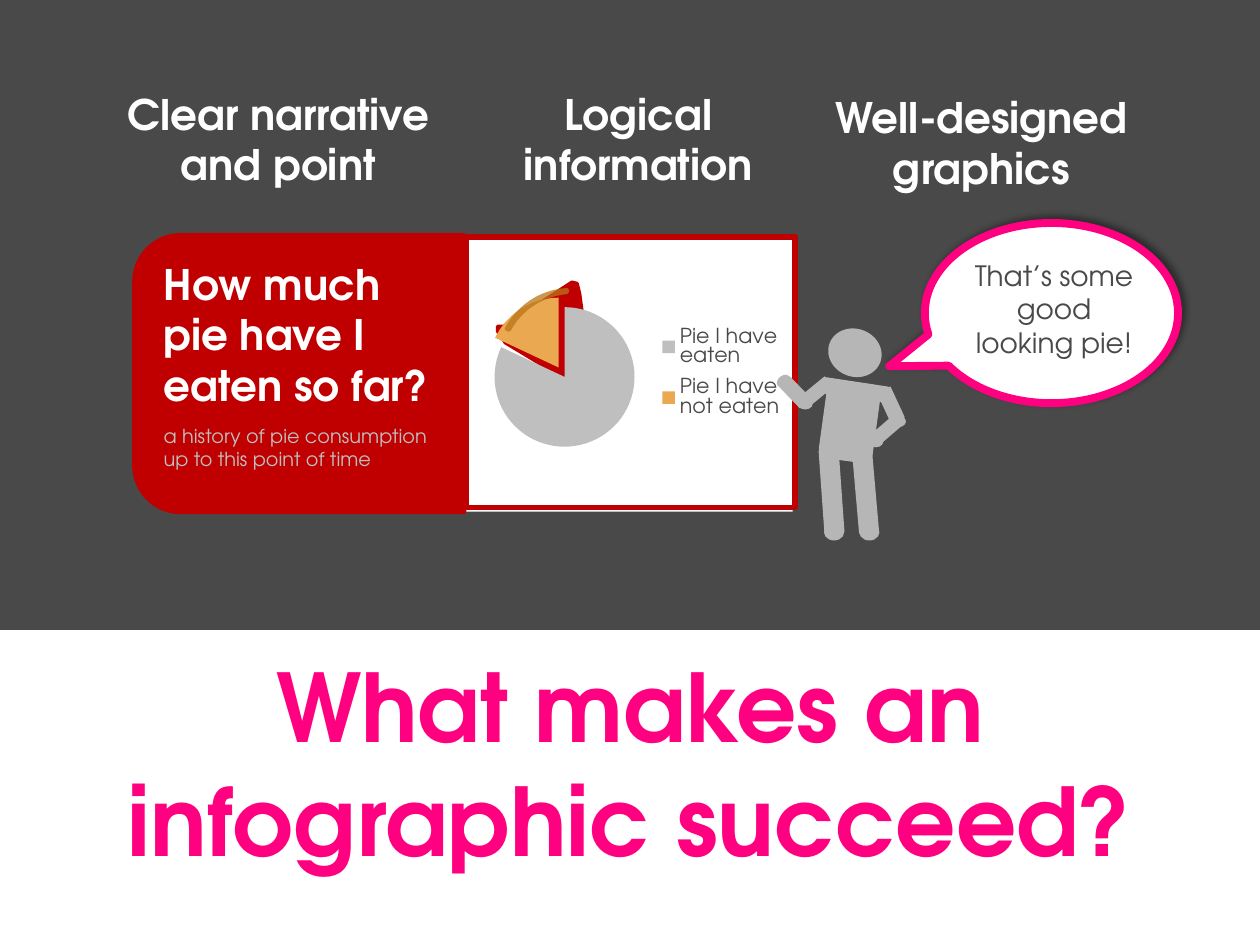
from lxml import etree
from pptx import Presentation
from pptx.chart.data import CategoryChartData
from pptx.dml.color import RGBColor
from pptx.enum.chart import XL_CHART_TYPE, XL_LEGEND_POSITION
from pptx.enum.shapes import MSO_SHAPE as Shape
from pptx.enum.text import MSO_ANCHOR as Anchor, PP_ALIGN as Align
from pptx.oxml import parse_xml
from pptx.oxml.ns import nsdecls, qn
from pptx.util import Inches, Pt

FONT = "TeX Gyre Adventor"
WHITE = RGBColor(0xFF, 0xFF, 0xFF)
CHARCOAL = RGBColor(0x49, 0x49, 0x49)
PINK = RGBColor(0xFF, 0x01, 0x80)
RED = RGBColor(0xC0, 0x00, 0x00)
SILVER = RGBColor(0xBF, 0xBF, 0xBF)
FIGURE_GREY = RGBColor(0xB6, 0xB6, 0xB6)
CRUST = RGBColor(0xEA, 0xA8, 0x50)
BROWN = RGBColor(0xBB, 0x75, 0x17)


def style(shape, fill=None, line=None, width=0):
    shape.shadow.inherit = False
    if fill is None:
        shape.fill.background()
    else:
        shape.fill.solid()
        shape.fill.fore_color.rgb = fill
    if line is None:
        shape.line.fill.background()
    else:
        shape.line.color.rgb = line
        shape.line.width = Pt(width)
    return shape


def add_preset(shapes, kind, box, fill, line=None, width=0, rotation=0):
    shape = shapes.add_shape(kind, *map(Inches, box))
    shape.rotation = rotation
    return style(shape, fill, line, width)


def add_text(slide, box, text, size, color, bold=False, align=Align.CENTER, anchor=Anchor.TOP):
    frame = slide.shapes.add_textbox(*map(Inches, box)).text_frame
    frame.word_wrap = True
    frame.vertical_anchor = anchor
    frame.text = text
    paragraph = frame.paragraphs[0]
    paragraph.alignment = align
    font = paragraph.runs[0].font
    font.name, font.size, font.bold = FONT, Pt(size), bold
    font.color.rgb = color


def add_outline(slide, left, top, points, fill, line, width):
    placed = [(Inches(left + x), Inches(top + y)) for x, y in points]
    builder = slide.shapes.build_freeform(*placed[0])
    builder.add_line_segments(placed[1:], close=True)
    return style(builder.convert_to_shape(), fill, line, width)


def bezier(start, control1, control2, end, steps=12):
    """Points along a cubic curve."""
    return [
        tuple((1 - t) ** 3 * a + 3 * (1 - t) ** 2 * t * b + 3 * (1 - t) * t ** 2 * c + t ** 3 * d
              for a, b, c, d in zip(start, control1, control2, end))
        for t in (step / steps for step in range(steps + 1))
    ]


def set_layout(element, x, y, w, h, inner=False):
    """Fix a chart part at fractions of the chart's size."""
    for old in element.findall(qn("c:layout")):
        element.remove(old)
    target = '<c:layoutTarget val="inner"/>' if inner else ""
    layout = parse_xml(
        f'<c:layout {nsdecls("c")}><c:manualLayout>{target}'
        '<c:xMode val="edge"/><c:yMode val="edge"/>'
        f'<c:x val="{x}"/><c:y val="{y}"/><c:w val="{w}"/><c:h val="{h}"/>'
        '</c:manualLayout></c:layout>')
    position = element.find(qn("c:legendPos"))
    if position is None:
        element.insert(0, layout)
    else:
        position.addnext(layout)


def add_pie_chart(slide, box):
    data = CategoryChartData()
    data.categories = ["Pie I have eaten", "Pie I have not eaten"]
    data.add_series("Series 1", (82, 18))
    chart = slide.shapes.add_chart(XL_CHART_TYPE.PIE, *map(Inches, box), data).chart
    chart.has_title = False
    chart.font.name, chart.font.size = FONT, Pt(18)
    chart.font.color.rgb = CHARCOAL
    chart.has_legend = True
    legend = chart.legend
    legend.position = XL_LEGEND_POSITION.RIGHT
    legend.include_in_layout = False
    legend.font.name, legend.font.size = FONT, Pt(12)
    legend.font.color.rgb = CHARCOAL

    plot = chart.plots[0]
    plot.vary_by_categories = True
    series = plot.series[0]
    for index, color in enumerate((SILVER, CRUST)):
        fill = series.points[index].format.fill
        fill.solid()
        fill.fore_color.rgb = color
    explosion = parse_xml(f'<c:explosion {nsdecls("c")} val="8"/>')
    series._element.find(qn("c:dPt")).addprevious(explosion)

    chart_part = chart._chartSpace.find(qn("c:chart"))
    set_layout(chart_part.find(qn("c:plotArea")), 0.06, 0.22, 0.46, 0.56, inner=True)
    set_layout(legend._element, 0.58, 0.29, 0.39, 0.42)
    chart_part.addnext(parse_xml(
        f'<c:spPr {nsdecls("c", "a")}><a:noFill/><a:ln w="{Pt(3)}"><a:solidFill>'
        f'<a:srgbClr val="{RED}"/></a:solidFill></a:ln></c:spPr>'))


def add_pie_panel(slide, left, top):
    add_preset(slide.shapes, Shape.RECTANGLE, (left, top, 2.79, 2.19), WHITE)
    filling = [(1.04, 0.37), (1.08, 0.38), (1.1, 0.46), (1.19, 1.13), (1.12, 1.09), (1.14, 1.23),
               (0.51, 0.85), (0.48, 0.8), (0.45, 0.76), (0.45, 0.72), (0.5, 0.72)]
    add_outline(slide, left, top, filling, RED, RED, 2)
    add_pie_chart(slide, (left + 0.18, top - 0.01, 2.65, 2.19))
    crust = (bezier((1, 0.45), (0.8, 0.47), (0.63, 0.58), (0.54, 0.75))
             + bezier((0.52, 0.74), (0.61, 0.57), (0.79, 0.44), (1, 0.43)))
    edge = add_outline(slide, left, top, crust, None, BROWN, 2)
    color = edge.line._ln.find(".//" + qn("a:srgbClr"))
    etree.SubElement(color, qn("a:alpha"), val="75000")


def add_question_card(slide, left, top, width, height):
    # The preset is rounded at its top, so it is turned a quarter to the left.
    turned = (left + (width - height) / 2, top - (width - height) / 2, height, width)
    add_preset(slide.shapes, Shape.ROUND_2_SAME_RECTANGLE, turned, RED, RED, 3, rotation=270)
    add_text(slide, (left + 0.13, top + 0.13, 2.38, 1.31), "How much pie have I eaten so far?",
             24, WHITE, True, Align.LEFT)
    add_text(slide, (left + 0.13, top + 1.45, 2.38, 0.47),
             "a history of pie consumption up to this point of time", 11, SILVER, align=Align.LEFT)


def add_presenter(slide, left, top):
    """Standing figure; each part is x, y, width, height, rotation."""
    parts = {
        Shape.OVAL: [
            (0.41, 0, 0.43, 0.38, 20.8),  # head
            (0.66, 1.55, 0.16, 0.13, 0), (0.38, 1.55, 0.16, 0.13, 0),  # feet
            (0, 0.37, 0.12, 0.09, 321.6), (0.73, 0.85, 0.12, 0.09, 0),  # hand, elbow
            (0.91, 0.69, 0.12, 0.09, 0), (0.17, 0.55, 0.12, 0.09, 0),  # elbows
        ],
        Shape.ROUNDED_RECTANGLE: [
            (0.37, 0.42, 0.43, 0.63, 7.8), (0.36, 0.42, 0.54, 0.13, 8.6),  # body, shoulders
        ],
        Shape.RECTANGLE: [
            (0.63, 0.96, 0.16, 0.66, 355), (0.36, 0.96, 0.16, 0.66, 355.9),  # legs
            (0.85, 0.47, 0.12, 0.27, 335.1), (0.26, 0.37, 0.11, 0.27, 50.7),  # upper arms
            (0.83, 0.66, 0.11, 0.27, 49.3), (0.09, 0.39, 0.12, 0.23, 316.2),  # forearms
        ],
    }
    figure = slide.shapes.add_group_shape()
    for kind, places in parts.items():
        for x, y, width, height, rotation in places:
            add_preset(figure.shapes, kind, (left + x, top + y, width, height),
                       FIGURE_GREY, rotation=rotation)


def add_speech_bubble(slide, left, top, width, height):
    bubble = add_preset(slide.shapes, Shape.OVAL_CALLOUT, (left, top, width, height),
                        WHITE, PINK, 4.5)
    bubble.adjustments[0], bubble.adjustments[1] = -0.641, 0.295
    effects = bubble._element.spPr.find(qn("a:effectLst"))
    effects.append(parse_xml(
        f'<a:outerShdw {nsdecls("a")} blurRad="{Pt(4)}" dist="{Pt(3)}" dir="{315 * 60000}" '
        'algn="bl" rotWithShape="0"><a:srgbClr val="000000"><a:alpha val="40000"/></a:srgbClr>'
        '</a:outerShdw>'))
    add_text(slide, (left + 0.25, top + 0.23, 1.55, 0.91), "That’s some good looking pie!",
             16, CHARCOAL)


def add_headings(slide):
    for left, top, width, heading in (
        (0.78, 0.65, 2.86, "Clear narrative and point"),
        (3.99, 0.65, 2.15, "Logical information"),
        (6.36, 0.68, 2.86, "Well-designed graphics"),
    ):
        add_text(slide, (left, top, width, 0.91), heading, 24, WHITE, True)


def main():
    deck = Presentation()
    deck.slide_width, deck.slide_height = Inches(10), Inches(7.5)
    slide = deck.slides.add_slide(deck.slide_layouts[6])
    add_text(slide, (0.5, 5.42, 9, 1.25), "What makes an infographic succeed?", 54, PINK, True,
             anchor=Anchor.MIDDLE)
    add_preset(slide.shapes, Shape.RECTANGLE, (0, 0, 10, 5), CHARCOAL)
    add_pie_panel(slide, 3.5, 1.87)
    add_question_card(slide, 1.07, 1.87, 2.61, 2.19)
    add_headings(slide)
    add_presenter(slide, 6.16, 2.61)
    add_speech_bubble(slide, 7.34, 1.77, 2.01, 1.43)
    deck.save("out.pptx")


if __name__ == "__main__":
    main()
